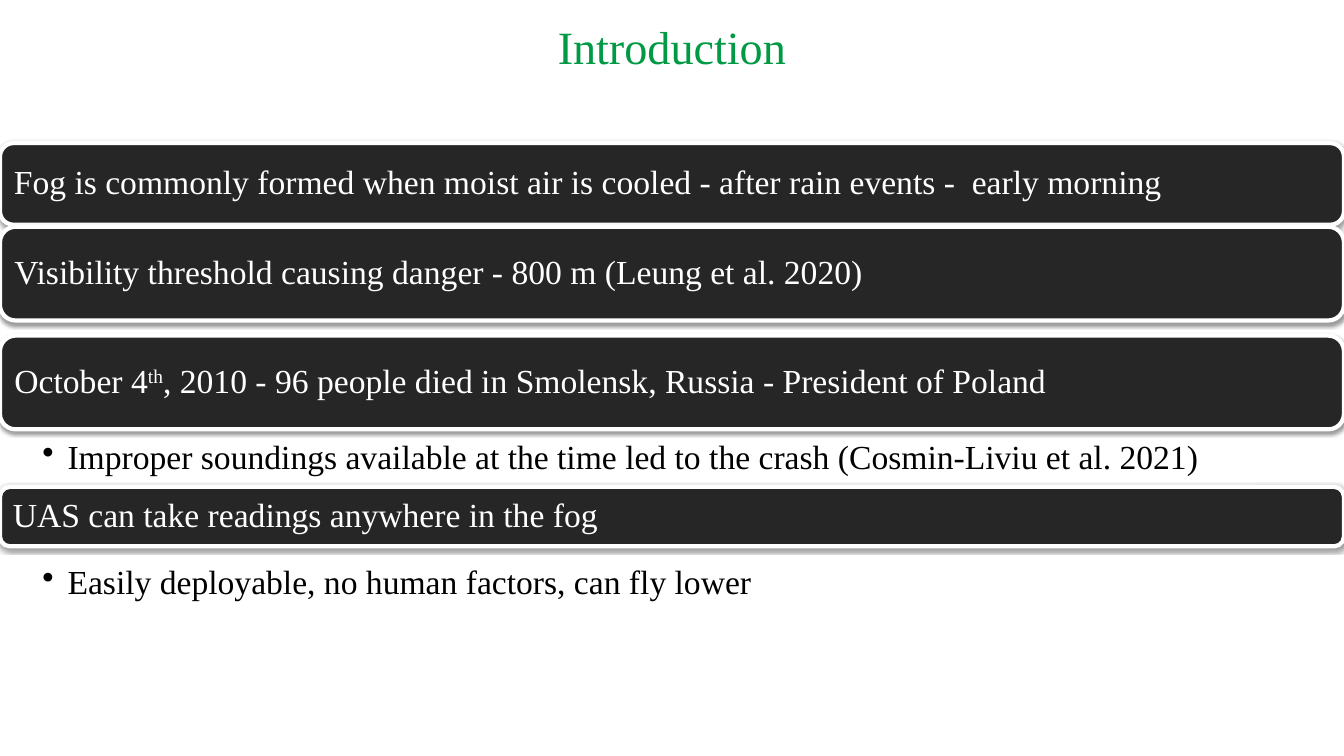
"""Build the fog introduction slide with its banner bars and bullet lines."""
from dataclasses import dataclass

import lxml.etree
import pptx
import pptx.dml.color
import pptx.enum.shapes
import pptx.enum.text
import pptx.oxml
import pptx.oxml.ns
import pptx.util

TITLE = "Introduction"
TITLE_BAND = (-1.2, 14.53)

# kind, top and height in percent of the slide height, (text, superscript) runs
BLOCKS = [
    ("bar", 18.93, 10.8, [("Fog is commonly formed when moist air is cooled - after rain events -  early morning", False)]),
    ("bar", 30, 12.4, [("Visibility threshold causing danger - 800 m (Leung et al. 2020)", False)]),
    ("bar", 44.4, 12.4, [
        ("October 4", False),
        ("th", True),
        (", 2010 - 96 people died in Smolensk, Russia - President of Poland", False),
    ]),
    ("bullet", 57.87, 10.67, [("Improper soundings available at the time led to the crash (Cosmin-Liviu et al. 2021)", False)]),
    ("bar", 64.4, 7.87, [("UAS can take readings anywhere in the fog", False)]),
    ("bullet", 74.4, 10.67, [("Easily deployable, no human factors, can fly lower", False)]),
]


@dataclass(frozen=True)
class Theme:
    font: str = "Times New Roman"
    title_size: float = 33
    body_size: float = 24
    title: str = "009A44"
    bar: str = "262626"
    light: str = "FFFFFF"
    dark: str = "000000"
    outline: float = 3
    shadow_blur: float = 3.1
    shadow_distance: float = 1.6
    shadow_opacity: int = 38


THEME = Theme()
BAR_INSETS = (0.1, 0.1, 0.1, 0.1)
BULLET_INSETS = (0.42, 0.03, 0.19, 0.03)
BULLET_INDENT = pptx.util.Inches(0.25)


def rgb(value):
    return pptx.dml.color.RGBColor.from_string(value)


def band(presentation, top, height):
    row = presentation.slide_height / 100
    return 0, round(top * row), presentation.slide_width, round(height * row)


def style_font(font, size, color):
    font.name = THEME.font
    font.size = pptx.util.Pt(size)
    font.color.rgb = rgb(color)


def set_frame(frame, insets, anchor):
    frame.word_wrap = True
    frame.vertical_anchor = anchor
    sides = ("margin_left", "margin_top", "margin_right", "margin_bottom")
    for side, inset in zip(sides, insets):
        setattr(frame, side, pptx.util.Inches(inset))


def add_shadow(shape):
    shape.shadow.inherit = False
    effects = shape.element.spPr.find(pptx.oxml.ns.qn("a:effectLst"))
    effects.append(pptx.oxml.parse_xml(
        f'<a:outerShdw {pptx.oxml.ns.nsdecls("a")} blurRad="{pptx.util.Pt(THEME.shadow_blur)}" '
        f'dist="{pptx.util.Pt(THEME.shadow_distance)}" dir="5400000" rotWithShape="0">'
        f'<a:srgbClr val="{THEME.dark}"><a:alpha val="{THEME.shadow_opacity * 1000}"/></a:srgbClr>'
        "</a:outerShdw>"
    ))


def add_bullet(paragraph):
    properties = paragraph._p.get_or_add_pPr()
    properties.set("marL", str(BULLET_INDENT))
    properties.set("indent", str(-BULLET_INDENT))
    bullet = lxml.etree.SubElement(properties, pptx.oxml.ns.qn("a:buChar"))
    bullet.set("char", "•")


def write_runs(paragraph, runs, color):
    paragraph.alignment = pptx.enum.text.PP_ALIGN.LEFT
    paragraph.line_spacing = 0.9
    for text, superscript in runs:
        run = paragraph.add_run()
        run.text = text
        style_font(run.font, THEME.body_size, color)
        if superscript:
            run._r.get_or_add_rPr().set("baseline", "30000")


def add_bar(slide, box, runs):
    shape = slide.shapes.add_shape(pptx.enum.shapes.MSO_SHAPE.ROUNDED_RECTANGLE, *box)
    shape.fill.solid()
    shape.fill.fore_color.rgb = rgb(THEME.bar)
    shape.line.color.rgb = rgb(THEME.light)
    shape.line.width = pptx.util.Pt(THEME.outline)
    add_shadow(shape)
    set_frame(shape.text_frame, BAR_INSETS, pptx.enum.text.MSO_ANCHOR.MIDDLE)
    write_runs(shape.text_frame.paragraphs[0], runs, THEME.light)


def add_bullet_line(slide, box, runs):
    shape = slide.shapes.add_textbox(*box)
    set_frame(shape.text_frame, BULLET_INSETS, pptx.enum.text.MSO_ANCHOR.TOP)
    paragraph = shape.text_frame.paragraphs[0]
    add_bullet(paragraph)
    write_runs(paragraph, runs, THEME.dark)


def add_title(presentation, slide):
    title = slide.shapes.title
    title.left, title.top, title.width, title.height = band(presentation, *TITLE_BAND)
    title.text_frame.text = TITLE
    title.text_frame.vertical_anchor = pptx.enum.text.MSO_ANCHOR.MIDDLE
    paragraph = title.text_frame.paragraphs[0]
    paragraph.alignment = pptx.enum.text.PP_ALIGN.CENTER
    style_font(paragraph.runs[0].font, THEME.title_size, THEME.title)


def main():
    presentation = pptx.Presentation()
    presentation.slide_width = pptx.util.Inches(13.33)
    presentation.slide_height = pptx.util.Inches(7.5)
    slide = presentation.slides.add_slide(presentation.slide_layouts[5])
    add_title(presentation, slide)
    builders = {"bar": add_bar, "bullet": add_bullet_line}
    for kind, top, height, runs in BLOCKS:
        builders[kind](slide, band(presentation, top, height), runs)
    presentation.save("out.pptx")


if __name__ == "__main__":
    main()
